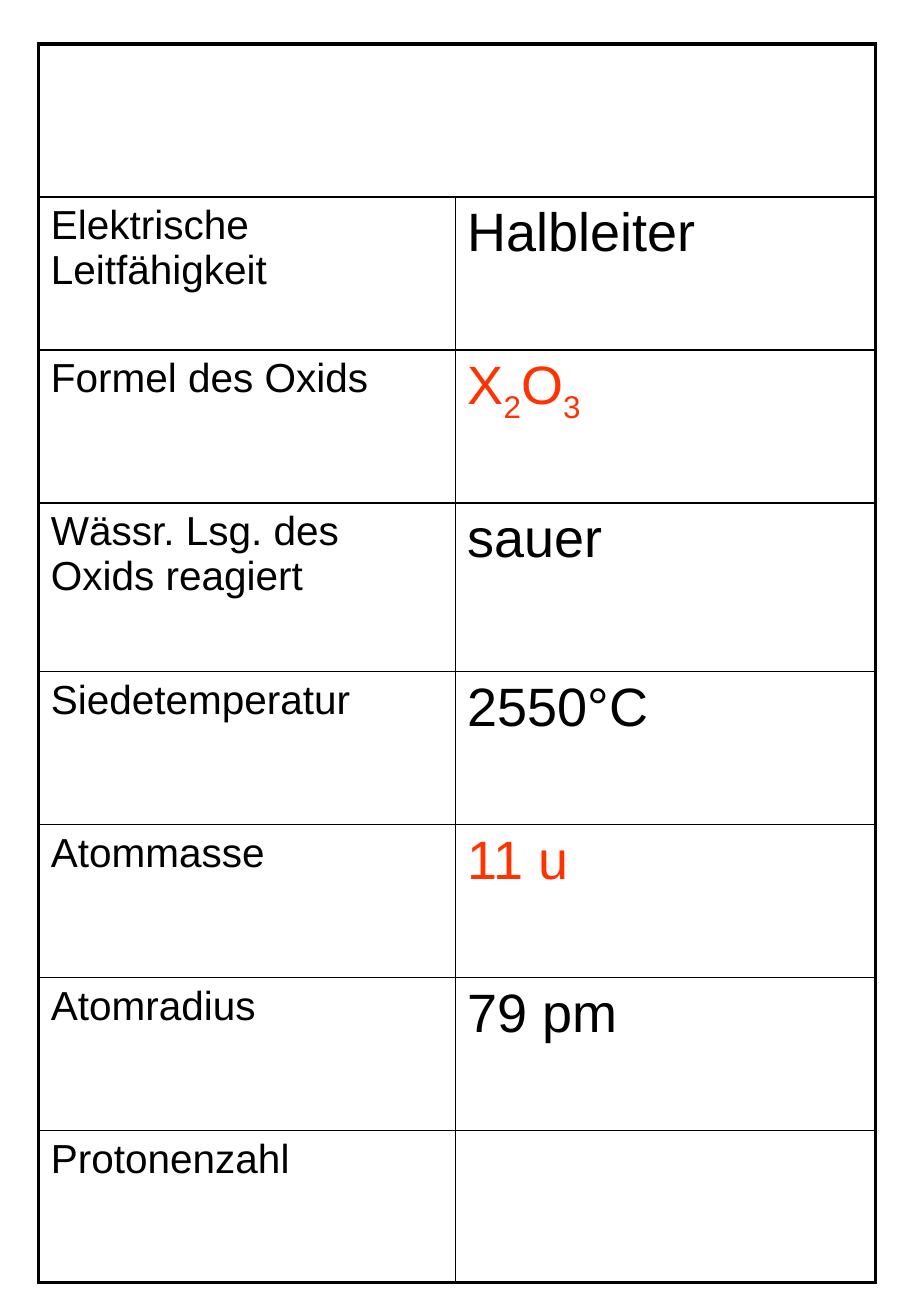
from lxml.etree import SubElement
from pptx import Presentation
from pptx.dml.color import RGBColor
from pptx.oxml.ns import qn
from pptx.util import Pt

BLACK, RED = "000000", "FF3300"
THICK, THIN = 2.25, 1

# Label, value as (text, is subscript) runs, value colour
ROWS = [
    ("Elektrische Leitfähigkeit", [("Halbleiter", False)], BLACK),
    ("Formel des Oxids",
     [("X", False), ("2", True), ("O", False), ("3", True)], RED),
    ("Wässr. Lsg. des Oxids reagiert", [("sauer", False)], BLACK),
    ("Siedetemperatur", [("2550°C", False)], BLACK),
    ("Atommasse", [("11 u", False)], RED),
    ("Atomradius", [("79 pm", False)], BLACK),
    ("Protonenzahl", [], BLACK),
]
WIDTHS = [247, 249]
HEIGHTS = [90.7, 90.7, 90.7, 100.1, 90.7, 90.7, 90.7, 90]


def color(code):
    return RGBColor.from_string(code)


def write(cell, runs, size, code):
    """Fill a cell with (text, is subscript) runs."""
    para = cell.text_frame.paragraphs[0]
    font = para.font
    font.name, font.size = "Arial", Pt(size)
    font.color.rgb = color(code)
    for text, low in runs:
        run = para.add_run()
        run.text = text
        if low:
            run.font._element.set("baseline", "-25000")


def border(cell, sides):
    """Draw black borders from a map of side letter to width in points."""
    props = cell._tc.get_or_add_tcPr()
    for side, width in sides.items():
        line = SubElement(props, qn("a:ln" + side), w=str(Pt(width)))
        fill = SubElement(line, qn("a:solidFill"))
        SubElement(fill, qn("a:srgbClr"), val=BLACK)


def add_grid(slide):
    """Add the table with a merged, empty top row and a thick frame."""
    count = len(HEIGHTS)
    frame = slide.shapes.add_table(
        count, 2, Pt(23), Pt(26), Pt(sum(WIDTHS)), Pt(sum(HEIGHTS)))
    table = frame.table
    table.first_row = table.horz_banding = False
    for col, width in zip(table.columns, WIDTHS):
        col.width = Pt(width)
    for row, height in zip(table.rows, HEIGHTS):
        row.height = Pt(height)
    table.cell(0, 0).merge(table.cell(0, 1))

    for r in range(count):
        for c in range(2):
            cell = table.cell(r, c)
            border(cell, {
                "L": THICK if c == 0 else THIN,
                "R": THICK if c == 1 or r == 0 else THIN,
                "T": THICK if r == 0 else THIN,
                "B": THICK if r == count - 1 else THIN,
            })
            cell.fill.background()
    return table


def main():
    deck = Presentation()
    deck.slide_width, deck.slide_height = Pt(540), Pt(780)
    slide = deck.slides.add_slide(deck.slide_layouts[6])
    table = add_grid(slide)
    for r, (label, value, code) in enumerate(ROWS, 1):
        write(table.cell(r, 0), [(label, False)], 24, BLACK)
        write(table.cell(r, 1), value, 32, code)
    deck.save("out.pptx")


if __name__ == "__main__":
    main()
